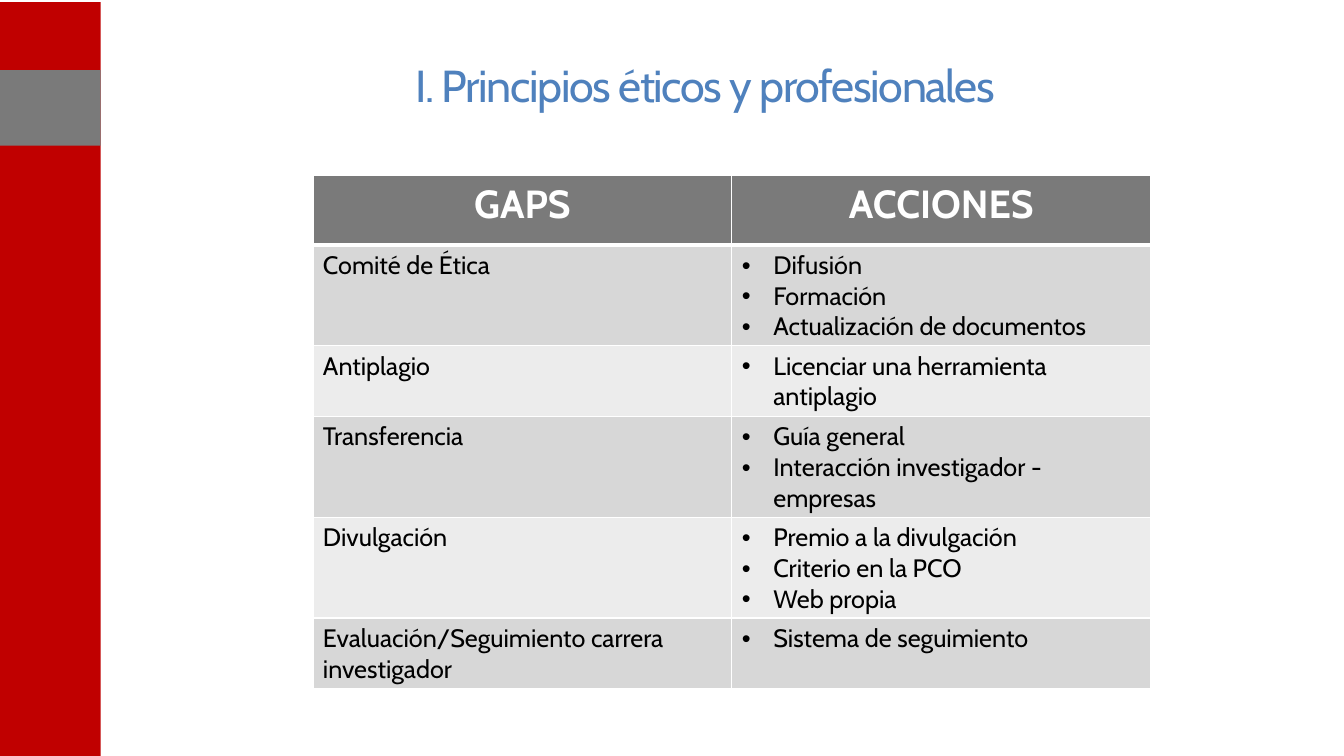
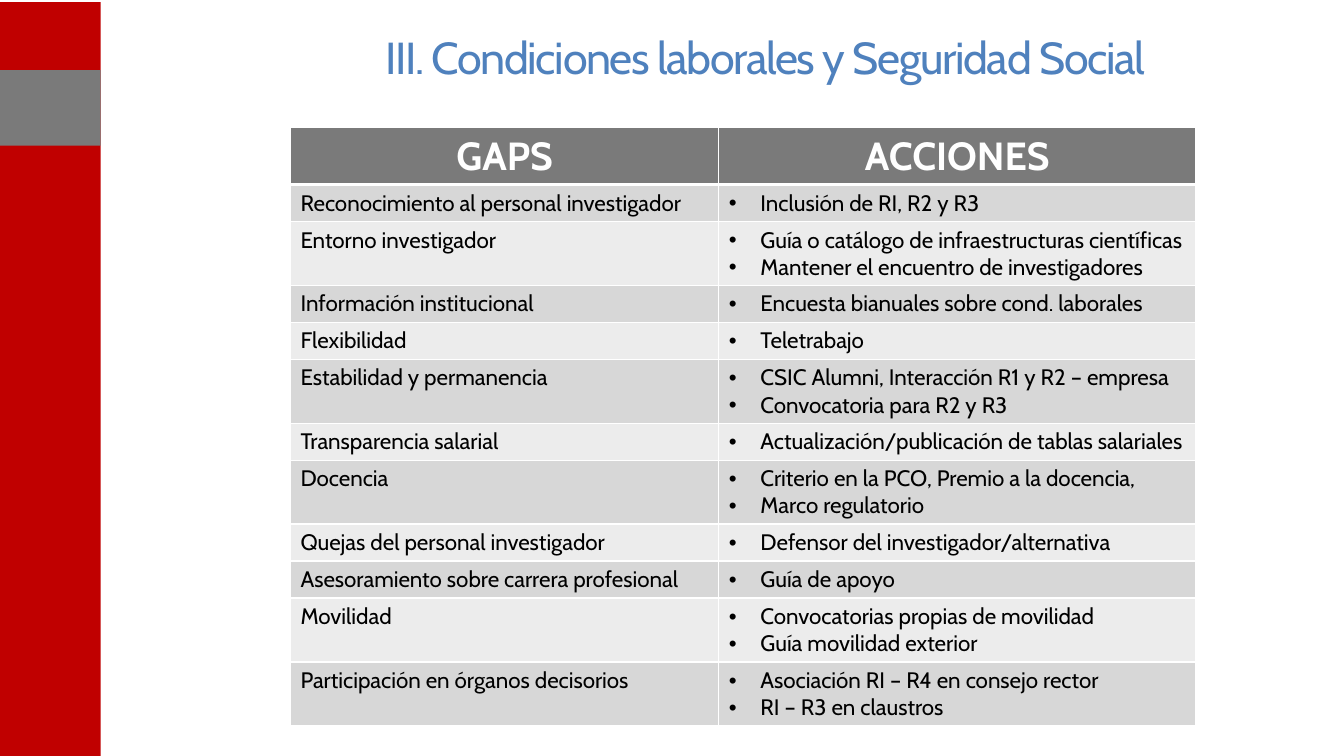
from math import ceil

from lxml import etree
from pptx import Presentation
from pptx.dml.color import RGBColor
from pptx.enum.shapes import MSO_SHAPE
from pptx.enum.text import MSO_ANCHOR, PP_ALIGN
from pptx.oxml.ns import qn
from pptx.util import Pt

RECTANGLE = MSO_SHAPE.RECTANGLE
TOP = MSO_ANCHOR.TOP
LEFT, CENTER = PP_ALIGN.LEFT, PP_ALIGN.CENTER

# Content: each row pairs a gap with its actions
HEADINGS = ("GAPS", "ACCIONES")
SECTIONS = [
    {
        "title": "I. Principios éticos y profesionales",
        "title_box": (289.5, 37.5, 435, 65.5),
        "table_at": (223.5, 125.5),
        "columns": (299.25, 299.25),
        "heading_height": 49.5,
        "size": 18,
        "chars_per_line": 30,
        "rows": [
            ("Comité de Ética", ["Difusión", "Formación", "Actualización de documentos"]),
            ("Antiplagio", ["Licenciar una herramienta antiplagio"]),
            ("Transferencia", ["Guía general", "Interacción investigador - empresas"]),
            ("Divulgación", ["Premio a la divulgación", "Criterio en la PCO", "Web propia"]),
            ("Evaluación/Seguimiento carrera investigador", ["Sistema de seguimiento"]),
        ],
    },
    {
        "title": "III. Condiciones laborales y Seguridad Social",
        "title_box": (268, 17.5, 575, 81.5),
        "table_at": (207.5, 91),
        "columns": (306, 340.5),
        "heading_height": 39,
        "size": 16,
        "chars_per_line": 50,
        "rows": [
            ("Reconocimiento al personal investigador", ["Inclusión de RI, R2 y R3"]),
            ("Entorno investigador", ["Guía o catálogo de infraestructuras científicas",
                                      "Mantener el encuentro de investigadores"]),
            ("Información institucional", ["Encuesta bianuales sobre cond. laborales"]),
            ("Flexibilidad", ["Teletrabajo"]),
            ("Estabilidad y permanencia", ["CSIC Alumni, Interacción R1 y R2 – empresa",
                                           "Convocatoria para R2 y R3"]),
            ("Transparencia salarial", ["Actualización/publicación de tablas salariales"]),
            ("Docencia", ["Criterio en la PCO, Premio a la docencia,", "Marco regulatorio"]),
            ("Quejas del personal investigador", ["Defensor del investigador/alternativa"]),
            ("Asesoramiento sobre carrera profesional", ["Guía de apoyo"]),
            ("Movilidad", ["Convocatorias propias de movilidad", "Guía movilidad exterior"]),
            ("Participación en órganos decisorios", ["Asociación RI – R4 en consejo rector",
                                                     "RI – R3 en claustros"]),
        ],
    },
]

# Shared style
COLORS = {
    "red": "C00000", "gray": "7A7A7A", "title": "4F81BD", "text": "000000",
    "white": "FFFFFF", "odd": "D7D7D7", "even": "ECECEC",
}
FONT = "Cabin"
SLIDE_WIDTH, SLIDE_HEIGHT = 960, 540
BANDS = [("red", 1.5, SLIDE_HEIGHT - 1.5), ("gray", 50, 54)]
BAND_WIDTH = 72
TITLE_SIZE, HEADING_SIZE = 32, 28
LINE_SPACING, CELL_MARGINS = 1.2, 7.2
BULLET_INDENT = 22.5
THIN, THICK = 1, 3


def rgb(name):
    return RGBColor.from_string(COLORS[name])


def style_font(font, size, color, bold=False):
    font.name, font.size, font.bold = FONT, Pt(size), bold
    font.color.rgb = rgb(color)


def add_side_bands(slide, layout):
    """Build the side bands and move them to the layout that all slides use."""
    for color, top, height in BANDS:
        band = slide.shapes.add_shape(RECTANGLE, 0, Pt(top), Pt(BAND_WIDTH), Pt(height))
        band.shadow.inherit = False
        band.fill.solid()
        band.fill.fore_color.rgb = rgb(color)
        band.line.fill.background()
        layout.shapes.element.append(band.element)


def add_title(slide, text, box):
    frame = slide.shapes.add_textbox(*map(Pt, box)).text_frame
    frame.word_wrap = True
    frame.vertical_anchor = TOP
    frame.text = text
    run = frame.paragraphs[0].runs[0]
    style_font(run.font, TITLE_SIZE, "title")
    run.font._element.set("spc", "-100")


def add_bullet(paragraph):
    properties = paragraph._p.get_or_add_pPr()
    properties.set("marL", str(Pt(BULLET_INDENT)))
    properties.set("indent", str(-Pt(BULLET_INDENT)))
    etree.SubElement(properties, qn("a:buFont")).set("typeface", "Arial")
    etree.SubElement(properties, qn("a:buChar")).set("char", "•")


def set_borders(cell, top, bottom):
    properties = cell._tc.get_or_add_tcPr()
    for side, width in (("L", THIN), ("R", THIN), ("T", top), ("B", bottom)):
        border = etree.SubElement(properties, qn("a:ln" + side), w=str(Pt(width)))
        fill = etree.SubElement(border, qn("a:solidFill"))
        etree.SubElement(fill, qn("a:srgbClr")).set("val", COLORS["white"])


def fill_cell(cell, lines, fill, size, color, heading=False, bulleted=False, top=THIN):
    set_borders(cell, top, THICK if heading else THIN)
    cell.fill.solid()
    cell.fill.fore_color.rgb = rgb(fill)
    cell.vertical_anchor = TOP
    cell.text_frame.text = "\n".join(lines)
    for paragraph in cell.text_frame.paragraphs:
        paragraph.alignment = CENTER if heading else LEFT
        if bulleted:
            add_bullet(paragraph)
        for run in paragraph.runs:
            style_font(run.font, size, color, bold=heading)


def row_height(gap, actions, section):
    def line_count(texts):
        return sum(ceil(len(text) / section["chars_per_line"]) for text in texts)

    lines = max(line_count([gap]), line_count(actions))
    return round(lines * section["size"] * LINE_SPACING + CELL_MARGINS, 2)


def add_gap_table(slide, section):
    rows, size = section["rows"], section["size"]
    heights = [section["heading_height"]] + [row_height(*row, section) for row in rows]
    left, top = section["table_at"]
    table = slide.shapes.add_table(
        len(heights), len(HEADINGS), Pt(left), Pt(top),
        Pt(sum(section["columns"])), Pt(sum(heights))).table
    table.horz_banding = False
    for column, width in zip(table.columns, section["columns"]):
        column.width = Pt(width)
    for row, height in zip(table.rows, heights):
        row.height = Pt(height)

    for index, heading in enumerate(HEADINGS):
        fill_cell(table.cell(0, index), [heading], "gray", HEADING_SIZE, "white", heading=True)
    for index, (gap, actions) in enumerate(rows, start=1):
        fill = "odd" if index % 2 else "even"
        edge = THICK if index == 1 else THIN
        fill_cell(table.cell(index, 0), [gap], fill, size, "text", top=edge)
        fill_cell(table.cell(index, 1), actions, fill, size, "text", bulleted=True, top=edge)


def main():
    deck = Presentation()
    deck.slide_width, deck.slide_height = Pt(SLIDE_WIDTH), Pt(SLIDE_HEIGHT)
    blank = deck.slide_layouts[6]
    slides = [deck.slides.add_slide(blank) for _ in SECTIONS]
    add_side_bands(slides[0], blank)
    for slide, section in zip(slides, SECTIONS):
        add_title(slide, section["title"], section["title_box"])
        add_gap_table(slide, section)
    deck.save("out.pptx")


if __name__ == "__main__":
    main()
